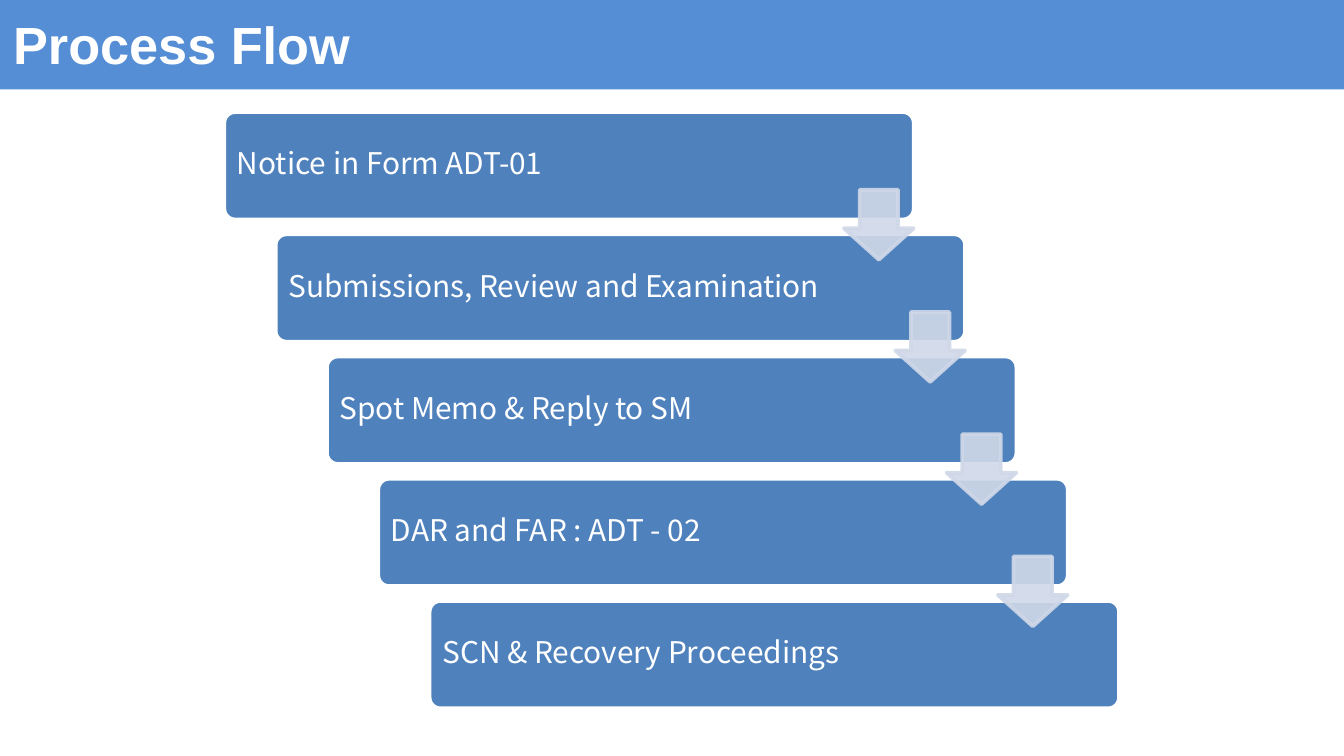
"""Build the Process Flow slide: a staircase of steps joined by arrows."""
from dataclasses import dataclass

from lxml import etree
from pptx import Presentation, util as u
from pptx.dml.color import RGBColor
from pptx.enum import shapes, text
from pptx.oxml import ns


@dataclass(frozen=True)
class Theme:
    white: str = "FFFFFF"
    band: str = "558ED5"
    step: str = "4F81BD"
    arrow: str = "D0D8E8"
    alpha: int = 90
    edge: float = 2
    head: float = 28
    body: float = 16
    sans: str = "Arial"
    face: str = "Noto Sans CJK KR"


@dataclass(frozen=True)
class Box:
    left: float
    top: float
    width: float
    height: float

    def shift(self, dx: float, dy: float) -> "Box":
        return Box(self.left + dx, self.top + dy, self.width, self.height)

    def cm(self) -> list[u.Cm]:
        return [u.Cm(v) for v in (self.left, self.top, self.width, self.height)]


THEME = Theme()
KIND = shapes.MSO_SHAPE
STEPS = (
    "Notice in Form ADT-01",
    "Submissions, Review and Examination",
    "Spot Memo & Reply to SM",
    "DAR and FAR : ADT - 02",
    "SCN & Recovery Proceedings",
)
DX, DY = 0.97, 2.31
BAND = Box(0, -0.05, 25.4, 1.74)
STEP = Box(4.24, 2.12, 13.03, 2.03)
LABEL = Box(4.3, 2.17, 10.62, 1.91)
ARROW = Box(15.95, 3.59, 1.32, 1.32)


def apply(target: object, form: dict) -> None:
    """Set each attribute named in the format."""
    for name, value in form.items():
        setattr(target, name, value)


def draw(parent, kind, box: Box, fill: str, line: str = "", adj: tuple = ()):
    """Draw a filled preset shape with an optional outline."""
    shape = parent.add_shape(kind, *box.cm())
    shape.shadow.inherit = False
    shape.fill.solid()
    shape.fill.fore_color.rgb = RGBColor.from_string(fill)
    if line:
        shape.line.color.rgb = RGBColor.from_string(line)
        shape.line.width = u.Pt(THEME.edge)
    else:
        shape.line.fill.background()
    for spot, value in enumerate(adj):
        shape.adjustments[spot] = value
    return shape


def write(shape, words: str, frame: dict, para: dict, font: dict) -> None:
    """Write one left-aligned white paragraph, centred vertically."""
    body = shape.text_frame
    apply(body, {"word_wrap": True, "vertical_anchor": text.MSO_ANCHOR.MIDDLE, **frame})
    line = body.paragraphs[0]
    apply(line, {"alignment": text.PP_ALIGN.LEFT, **para})
    run = line.add_run()
    run.text = words
    apply(run.font, font)
    run.font.color.rgb = RGBColor.from_string(THEME.white)


def fade(shape, share: int) -> None:
    """Give the fill and outline of a shape the same opacity in percent."""
    for color in shape._element.spPr.iter(ns.qn("a:srgbClr")):
        etree.SubElement(color, ns.qn("a:alpha"), val=str(share * 1000))


def main() -> None:
    """Build and save the slide."""
    deck = Presentation()
    apply(deck, {"slide_width": u.Cm(25.4), "slide_height": u.Cm(14.29)})
    slide = deck.slides.add_slide(deck.slide_layouts[6])

    band = draw(slide.shapes, KIND.RECTANGLE, BAND, THEME.band)
    write(band, "Process Flow", {}, {},
          {"name": THEME.sans, "size": u.Pt(THEME.head), "bold": True})

    flow = slide.shapes.add_group_shape().shapes
    sides = ("left", "right", "top", "bottom")
    frame = {f"margin_{side}": u.Cm(0.18) for side in sides}
    para = {"line_spacing": 0.9, "space_after": u.Pt(0.35 * THEME.body)}
    font = {"name": THEME.face, "size": u.Pt(THEME.body)}
    for row, words in enumerate(STEPS):
        move = row * DX, row * DY
        draw(flow, KIND.ROUNDED_RECTANGLE, STEP.shift(*move),
             THEME.step, THEME.white, (0.1,))
        label = flow.add_textbox(*LABEL.shift(*move).cm())
        write(label, words, frame, para, font)
    for row in range(len(STEPS) - 1):
        arrow = draw(flow, KIND.DOWN_ARROW, ARROW.shift(row * DX, row * DY),
                     THEME.arrow, THEME.arrow, (0.55, 0.45))
        fade(arrow, THEME.alpha)

    deck.save("out.pptx")


if __name__ == "__main__":
    main()
